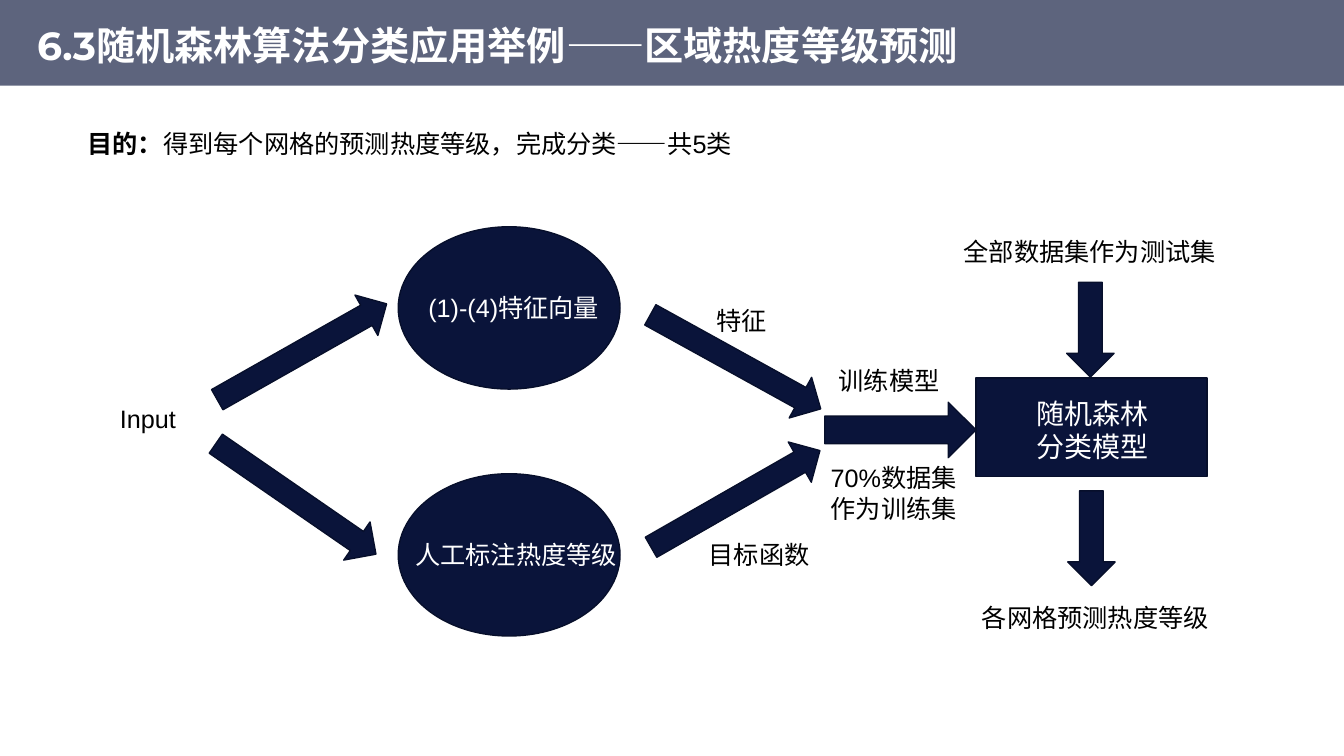
from pptx import Presentation
from pptx.dml.color import RGBColor
from pptx.enum.shapes import MSO_SHAPE
from pptx.enum.text import MSO_ANCHOR, MSO_AUTO_SIZE
from pptx.util import Inches, Pt

THEME = {
    "band": RGBColor(0x5D, 0x64, 0x7D),
    "navy": RGBColor(0x0A, 0x14, 0x3A),
    "outline": RGBColor(0x07, 0x0F, 0x2B),
    "white": RGBColor(0xFF, 0xFF, 0xFF),
    "black": RGBColor(0x00, 0x00, 0x00),
    "title_font": "Montserrat",
    "body_font": "Arial",
    "title_size": Pt(28),
    "model_size": Pt(20),
    "body_size": Pt(18),
}

presentation = Presentation()
presentation.slide_width = Inches(13.33)
presentation.slide_height = Inches(7.5)
slide = presentation.slides.add_slide(presentation.slide_layouts[6])


def add_block(kind, box, rotation=0, fill="navy", outline="outline"):
    shape = slide.shapes.add_shape(kind, *[Inches(value) for value in box])
    shape.shadow.inherit = False
    shape.rotation = rotation
    shape.fill.solid()
    shape.fill.fore_color.rgb = THEME[fill]
    shape.line.color.rgb = THEME[outline]
    shape.line.width = Pt(1)
    return shape


def add_text(box, lines, color="black", size="body_size", font="body_font"):
    """Each line is a list of (text, bold) runs."""
    text_frame = slide.shapes.add_textbox(*[Inches(value) for value in box]).text_frame
    text_frame.word_wrap = True
    text_frame.auto_size = MSO_AUTO_SIZE.SHAPE_TO_FIT_TEXT
    for index, line in enumerate(lines):
        paragraph = text_frame.add_paragraph() if index else text_frame.paragraphs[0]
        for text, bold in line:
            run = paragraph.add_run()
            run.text = text
            run.font.color.rgb = THEME[color]
            formats = {"name": THEME[font], "size": THEME[size], "bold": bold}
            for name, value in formats.items():
                setattr(run.font, name, value)
    return text_frame


# Title band
band = add_block(MSO_SHAPE.RECTANGLE, (0, 0, 13.33, 0.85), fill="band")
band.line.fill.background()
title = add_text((0.27, 0.16, 11.5, 0.63),
                 [[("6.3随机森林算法分类应用举例——区域热度等级预测", True)]],
                 "white", "title_size", "title_font")
title.auto_size = MSO_AUTO_SIZE.NONE
title.vertical_anchor = MSO_ANCHOR.MIDDLE
title.paragraphs[0].line_spacing = 0.9

# Purpose
add_text((0.77, 1.22, 10.25, 0.4),
         [[("目的：", True), ("得到每个网格的预测热度等级，完成分类——共5类", False)]])

# Slanted arrows: left, top, rotation
for left, top, rotation in [
    (2.03, 3.26, 330.5),
    (1.97, 4.72, 34.6),
    (6.33, 3.36, 28.9),
    (6.33, 4.72, 330.2),
]:
    add_block(MSO_SHAPE.RIGHT_ARROW, (left, top, 1.93, 0.46), rotation)

# Feature and label ellipses
for top in (2.25, 4.7):
    add_block(MSO_SHAPE.OVAL, (3.95, top, 2.2, 1.61))

# Model with its training, test and output arrows
add_block(MSO_SHAPE.RIGHT_ARROW, (8.18, 3.99, 1.5, 0.55))
add_block(MSO_SHAPE.RECTANGLE, (9.68, 3.75, 2.29, 0.98))
for left, top in [(10.58, 2.8), (10.59, 4.87)]:
    add_block(MSO_SHAPE.DOWN_ARROW, (left, top, 0.47, 0.94))
add_text((10.18, 3.88, 2.29, 0.77),
         [[("随机森林", False)], [("分类模型", False)]], "white", "model_size")

# Flow labels: left, top, width, height, text, color
for left, top, width, height, text, color in [
    (1.09, 3.95, 0.94, 0.4, "Input", "black"),
    (4.15, 2.85, 2.01, 0.4, "(1)-(4)特征向量", "white"),
    (4.02, 5.3, 2.2, 0.4, "人工标注热度等级", "white"),
    (7.01, 2.98, 1.02, 0.4, "特征", "black"),
    (6.93, 5.3, 1.28, 0.4, "目标函数", "black"),
    (8.22, 3.58, 1.3, 0.4, "训练模型", "black"),
    (8.14, 4.54, 1.5, 0.71, "70%数据集作为训练集", "black"),
    (9.46, 2.3, 2.72, 0.4, "全部数据集作为测试集", "black"),
    (9.64, 5.93, 2.6, 0.4, "各网格预测热度等级", "black"),
]:
    add_text((left, top, width, height), [[(text, False)]], color)

presentation.save("out.pptx")
